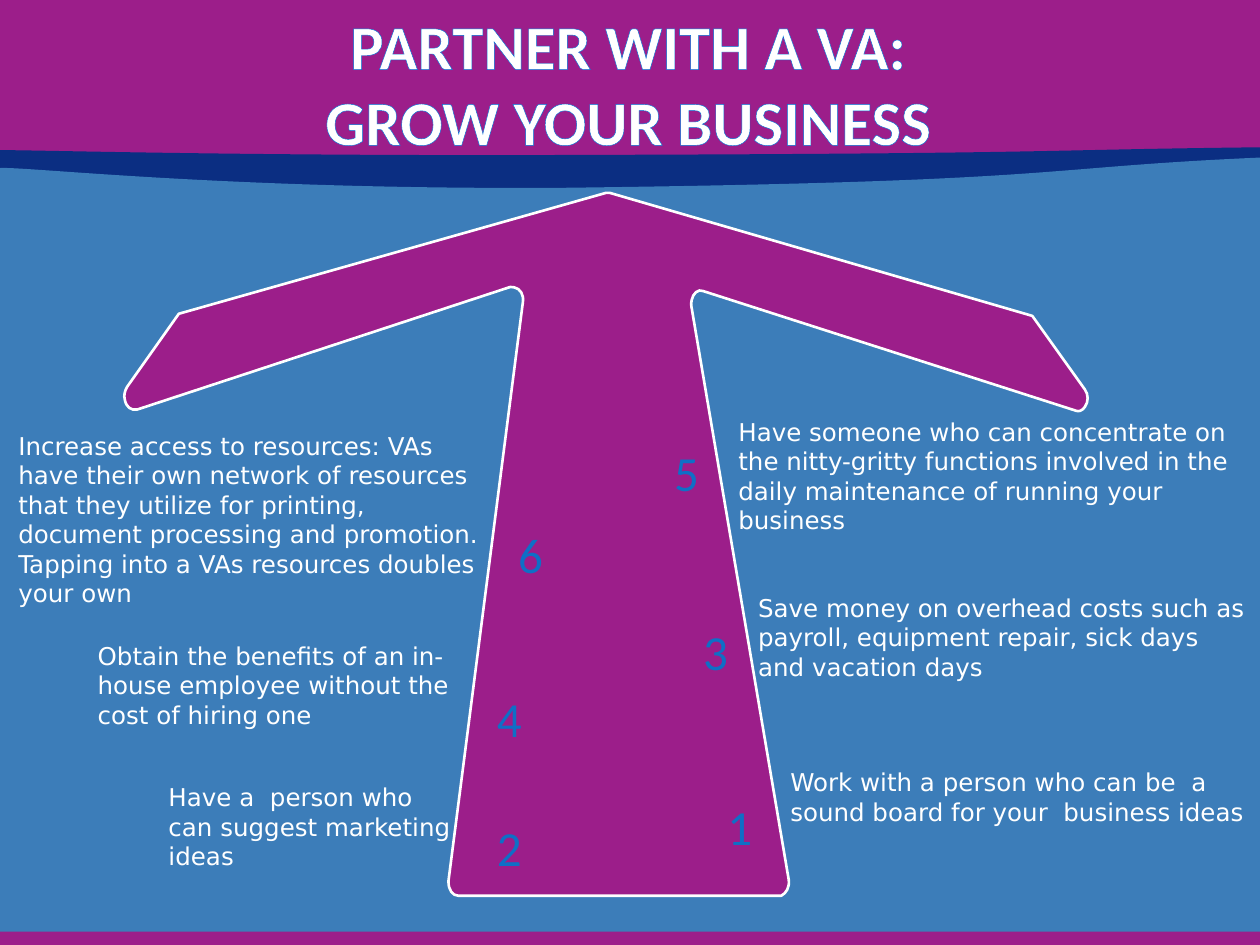
import lxml.etree
import pptx
import pptx.dml.color
import pptx.enum.shapes
import pptx.enum.text
import pptx.oxml.ns
import pptx.util

Pt = pptx.util.Pt
RGBColor = pptx.dml.color.RGBColor
MSO_SHAPE = pptx.enum.shapes.MSO_SHAPE
MSO_ANCHOR = pptx.enum.text.MSO_ANCHOR
PP_ALIGN = pptx.enum.text.PP_ALIGN
qn = pptx.oxml.ns.qn

PURPLE = RGBColor(0x9C, 0x1E, 0x8A)
NAVY = RGBColor(0x0B, 0x2E, 0x82)
BLUE = RGBColor(0x3C, 0x7D, 0xB9)
BRIGHT_BLUE = RGBColor(0x0F, 0x6F, 0xC6)
TITLE_EDGE = RGBColor(0x00, 0x70, 0xD5)
WHITE = RGBColor(0xFF, 0xFF, 0xFF)

TITLE_LINES = ["PARTNER WITH A VA:", "GROW YOUR BUSINESS"]

# Outlines: two numbers are a line's end, six numbers a Bezier curve
NAVY_WAVE = [
    (-2, 86), (-2, 85, 116, 89.3, 322.6, 88.6),
    (613.4, 87.8, 587.5, 85.7, 720, 84.2), (720, 210), (-2, 210),
]
BLUE_WAVE = [
    (-2, 96.5), (-2, 92.9, 116, 108.7, 323.3, 107.3),
    (614.2, 103.7, 588.2, 95.8, 720.7, 90), (720.7, 540), (-2, 540),
]
ARROW = [
    (102.2, 179.3), (346.3, 110.2), (347, 110, 347.8, 110, 348.5, 110.2),
    (588.2, 180), (589.7, 180, 590.4, 180.7, 591.1, 182.2),
    (619.9, 222.5), (622.1, 225.4, 622.1, 229.7, 619.9, 232.6),
    (618.5, 234.7, 616.3, 235.4, 614.9, 234.7),
    (401.8, 166.3), (398.9, 164.9, 396, 167.8, 395.3, 171.4),
    (394.9, 172.8, 394.9, 174.2, 395.1, 175),
    (450.7, 502.6), (451.4, 506.9, 449.3, 510.5, 446.4, 511.9),
    (445.7, 511.9, 445.7, 511.9, 445, 511.9),
    (262.1, 511.9), (258.5, 511.9, 256.3, 508.3, 256.3, 504),
    (256.3, 504, 256.3, 503.3, 256.3, 503.3),
    (298.8, 172.8), (299.5, 168.5, 297.4, 164.9, 293.8, 164.2),
    (293, 163.8, 292.3, 163.8, 291.6, 164),
    (78.5, 234), (74.9, 234.7, 72, 232.6, 71.3, 228.2),
    (70.6, 226.1, 71.3, 223.2, 72.7, 221),
]

# Benefit text, its box, its left indent, its anchor
BENEFITS = [
    ("Work with a person who can be  a sound board for your  business ideas",
     (424.6, 438.5, 299.5, 33.8), 27, MSO_ANCHOR.MIDDLE),
    ("Have a  person who can suggest marketing ideas",
     (96.3, 444.6, 167.8, 55.4), 0, MSO_ANCHOR.MIDDLE),
    ("Save money on overhead costs such as payroll, equipment repair, "
     "sick days and vacation days",
     (433.2, 338.5, 279.4, 51.1), 0, MSO_ANCHOR.MIDDLE),
    ("Obtain the benefits of an in-house employee without the cost of "
     "hiring one",
     (55.8, 363.8, 221, 55.4), 0, MSO_ANCHOR.MIDDLE),
    ("Have someone who can concentrate on the nitty-gritty functions "
     "involved in the daily maintenance of running your business",
     (421.9, 238, 289.4, 67.7), 0, MSO_ANCHOR.MIDDLE),
    ("Increase access to resources: VAs have their own network of resources "
     "that they utilize for printing, document processing and promotion. "
     "Tapping into a VAs resources doubles your own",
     (10.5, 246.3, 269.3, 117.4), 0, MSO_ANCHOR.TOP),
]

# Left, top and height of the numbers, from 1 to 6
NUMBER_PLACES = [
    (408.2, 452.2, 39.6), (276.5, 464.4, 39.6), (394.3, 352.1, 39.6),
    (276.5, 390.2, 39.6), (377.8, 249.8, 39.6), (288.7, 304.2, 25.2),
]


def paint(shape, fill, line=None):
    shape.shadow.inherit = False
    if fill is None:
        shape.fill.background()
    else:
        shape.fill.solid()
        shape.fill.fore_color.rgb = fill
    if line is None:
        shape.line.fill.background()
    else:
        shape.line.color.rgb = line
        shape.line.width = Pt(1.5)


def add_outline(slide, outline, fill, line=None):
    ends = [(Pt(part[-2]), Pt(part[-1])) for part in outline]
    builder = slide.shapes.build_freeform(*ends[0], scale=1.0)
    builder.add_line_segments(ends[1:], close=True)
    shape = builder.convert_to_shape()
    paint(shape, fill, line)
    # Bend the segments that have control points
    segments = list(shape._element.iter(qn("a:lnTo")))
    for segment, part in zip(segments, outline[1:]):
        if len(part) == 6:
            segment.getparent().replace(segment, curve_to(shape, part))


def curve_to(shape, part):
    curve = lxml.etree.Element(qn("a:cubicBezTo"))
    for x, y in zip(part[::2], part[1::2]):
        lxml.etree.SubElement(curve, qn("a:pt"), x=str(Pt(x) - shape.left),
                              y=str(Pt(y) - shape.top))
    return curve


def add_box(slide, kind, place, fill):
    box = slide.shapes.add_shape(kind, *map(Pt, place))
    paint(box, fill)
    return box


def set_frame(frame, inset, wrap=True, anchor=MSO_ANCHOR.MIDDLE):
    frame.word_wrap = wrap
    frame.vertical_anchor = anchor
    frame.margin_left = frame.margin_right = Pt(inset)
    frame.margin_top = frame.margin_bottom = Pt(inset)


def add_run(paragraph, text, font, size, color, bold=False):
    run = paragraph.add_run()
    run.text = text
    run.font.name = font
    run.font.size = Pt(size)
    run.font.color.rgb = color
    run.font.bold = bold
    return run


def add_title(slide):
    title = slide.shapes.add_textbox(Pt(35), Pt(2), Pt(648), Pt(90))
    set_frame(title.text_frame, 3.6)
    paragraph = title.text_frame.paragraphs[0]
    paragraph.alignment = PP_ALIGN.CENTER
    for index, line in enumerate(TITLE_LINES):
        if index:
            paragraph.add_line_break()
        run = add_run(paragraph, line, "Calibri", 36, WHITE, bold=True)
        # Thin edge around the letters
        edge = lxml.etree.Element(qn("a:ln"), w=str(Pt(1)))
        edge_fill = lxml.etree.SubElement(edge, qn("a:solidFill"))
        lxml.etree.SubElement(edge_fill, qn("a:srgbClr"), val=str(TITLE_EDGE))
        run.font._element.insert(0, edge)


def add_benefit(slide, text, place, indent, anchor):
    benefit = slide.shapes.add_textbox(*map(Pt, place))
    set_frame(benefit.text_frame, 0, anchor=anchor)
    paragraph = benefit.text_frame.paragraphs[0]
    if indent:
        paragraph._p.get_or_add_pPr().set("marL", str(Pt(indent)))
    add_run(paragraph, text, "DejaVu Sans", 14, WHITE)


def add_number(slide, number, left, top, height):
    fill = None if number == len(NUMBER_PLACES) else PURPLE
    badge = add_box(slide, MSO_SHAPE.ROUNDED_RECTANGLE,
                    (left, top, 24.5, height), fill)
    badge.adjustments[0] = 0.23
    set_frame(badge.text_frame, 5.8, wrap=False)
    paragraph = badge.text_frame.paragraphs[0]
    paragraph.alignment = PP_ALIGN.LEFT
    add_run(paragraph, str(number), "Calibri", 28, BRIGHT_BLUE)


def main():
    deck = pptx.Presentation()
    deck.slide_width, deck.slide_height = Pt(720), Pt(540)
    slide = deck.slides.add_slide(deck.slide_layouts[6])

    # Background bands
    add_box(slide, MSO_SHAPE.RECTANGLE, (-2, 0, 723, 126), PURPLE)
    add_outline(slide, NAVY_WAVE, NAVY)
    add_outline(slide, BLUE_WAVE, BLUE)
    add_box(slide, MSO_SHAPE.RECTANGLE, (-2, 532.4, 723, 12), PURPLE)

    # Title and growth arrow
    add_title(slide)
    add_outline(slide, ARROW, PURPLE, WHITE)

    # Numbered benefits
    for benefit in BENEFITS:
        add_benefit(slide, *benefit)
    for number, place in enumerate(NUMBER_PLACES, start=1):
        add_number(slide, number, *place)

    deck.save("out.pptx")


if __name__ == "__main__":
    main()
